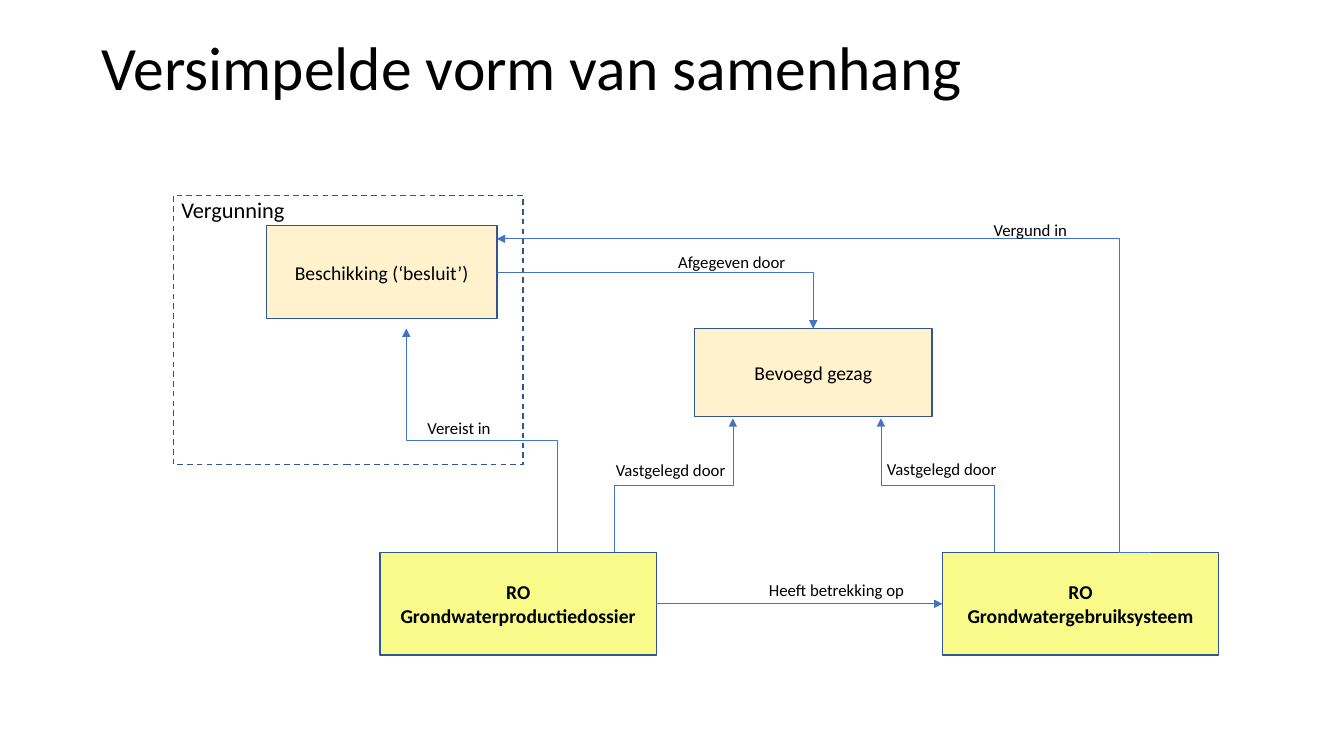
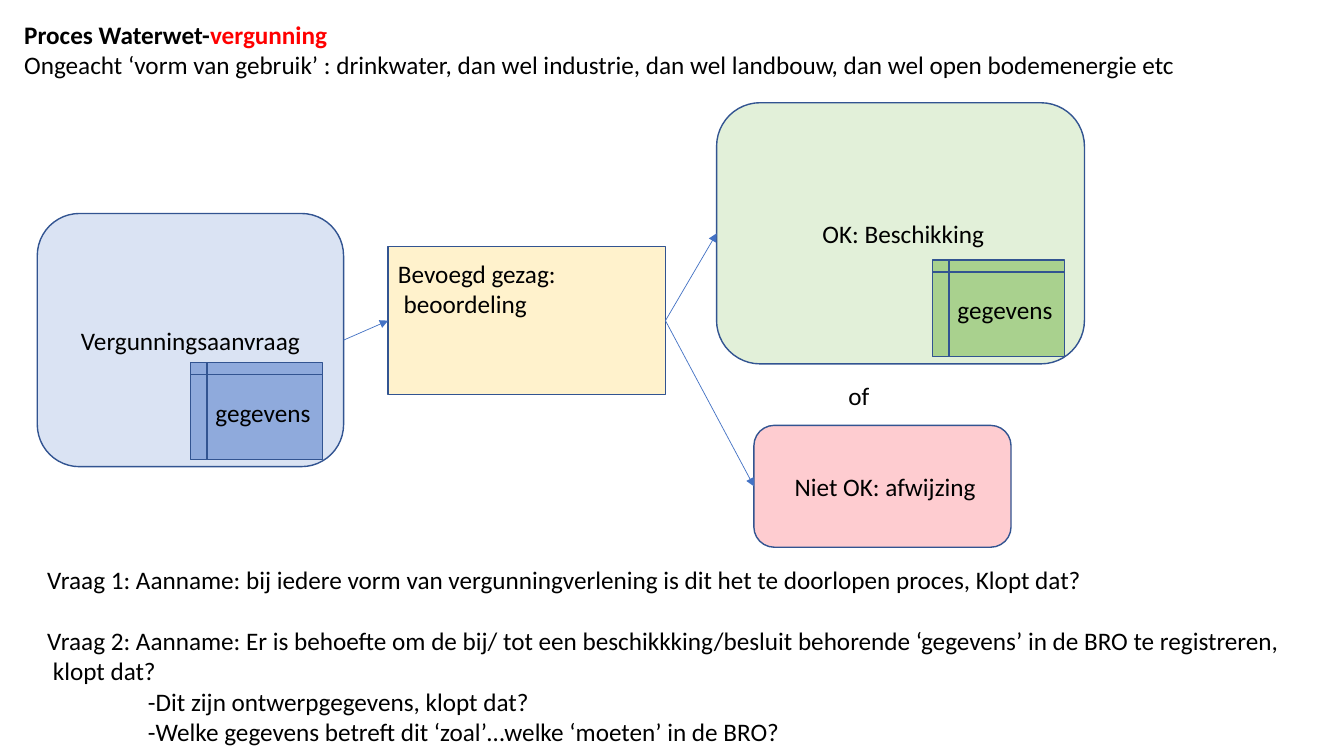
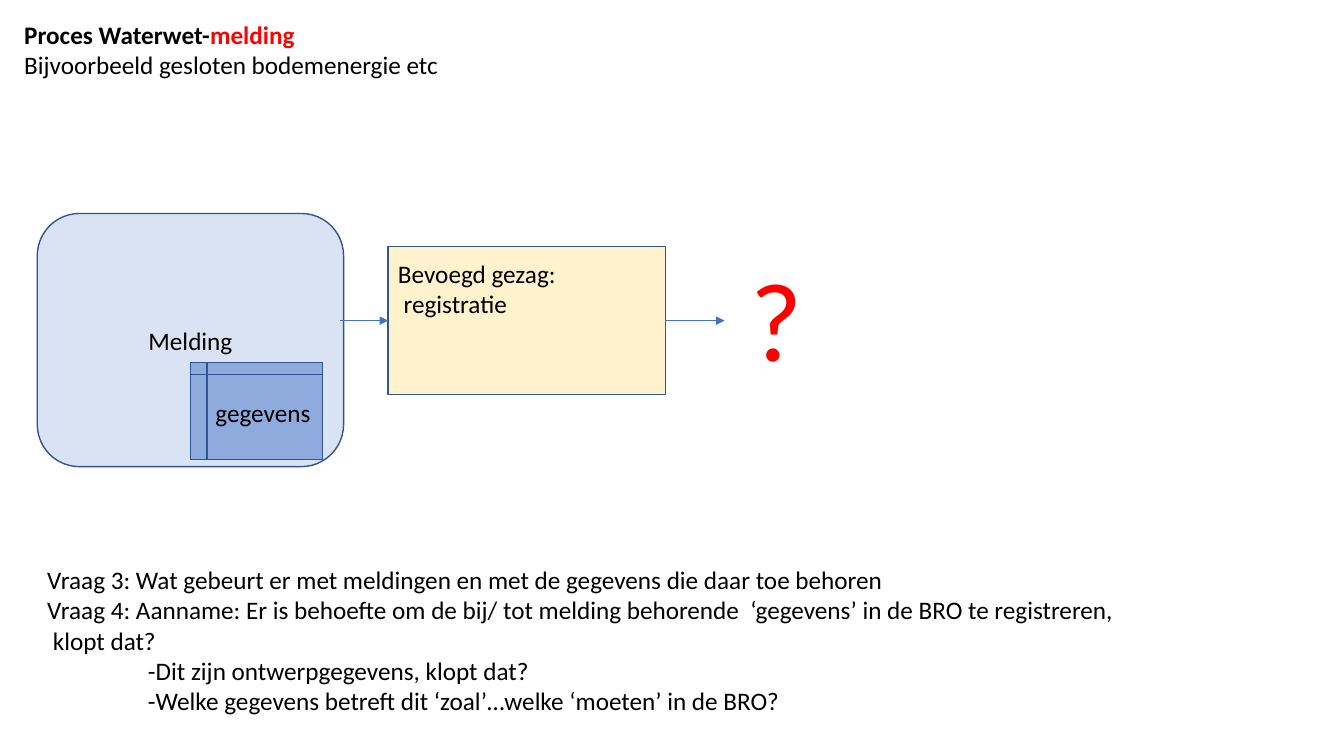
from lxml.etree import SubElement
from pptx import Presentation
from pptx.dml.color import RGBColor
from pptx.enum.dml import MSO_LINE
from pptx.enum.shapes import MSO_CONNECTOR, MSO_SHAPE
from pptx.enum.text import MSO_ANCHOR, PP_ALIGN
from pptx.oxml.ns import qn
from pptx.util import Cm, Pt

COLORS = {
    "text": "000000", "accent": "FF0000", "outline": "325491", "arrow": "4472C4",
    "object": "F8FB89", "authority": "FFF2CC", "request": "DAE3F3",
    "request_data": "8FAADC", "approved": "E2F0D9", "approved_data": "A9D18E",
    "rejected": "FECCD0",
}
FONT = "Calibri"
TOP, LEFT, BOTTOM, RIGHT = range(4)
BOX_TOP = 13.92  # upper edge of both registration objects


def rgb(name):
    return RGBColor.from_string(COLORS[name])


class Deck:
    """House style plus the slide being drawn; all positions in centimetres."""

    def __init__(self):
        self.presentation = Presentation()
        self.presentation.slide_width = Cm(33.87)
        self.presentation.slide_height = Cm(19.05)
        self.shapes = None

    def new_slide(self):
        layout = self.presentation.slide_layouts[6]
        self.shapes = self.presentation.slides.add_slide(layout).shapes

    def add_lines(self, frame, lines, size, bold=False, color="text", align=PP_ALIGN.LEFT):
        """Each line is a string or a list of (text, bold, color) runs."""
        for number, line in enumerate(lines):
            paragraph = frame.paragraphs[0] if number == 0 else frame.add_paragraph()
            paragraph.alignment = align
            runs = [(line, bold, color)] if isinstance(line, str) else line
            for words, is_bold, run_color in runs:
                run = paragraph.add_run()
                run.text = words
                run.font.name = FONT
                run.font.size = Pt(size)
                run.font.bold = is_bold
                run.font.color.rgb = rgb(run_color)

    def text(self, left, top, width, height, lines, size=18, **style):
        frame = self.shapes.add_textbox(Cm(left), Cm(top), Cm(width), Cm(height)).text_frame
        frame.word_wrap = False
        self.add_lines(frame, lines, size, **style)
        return frame

    def label(self, left, top, width, words):
        self.text(left, top, width, 0.76, [words], 12)

    def box(self, left, top, width, height, fill=None, lines=(), size=18, bold=False,
            kind=MSO_SHAPE.RECTANGLE):
        shape = self.shapes.add_shape(kind, Cm(left), Cm(top), Cm(width), Cm(height))
        shape.shadow.inherit = False
        if fill:
            shape.fill.solid()
            shape.fill.fore_color.rgb = rgb(fill)
        else:
            shape.fill.background()
        shape.line.color.rgb = rgb("outline")
        shape.line.width = Pt(1)
        shape.text_frame.vertical_anchor = MSO_ANCHOR.MIDDLE
        self.add_lines(shape.text_frame, lines, size, bold, align=PP_ALIGN.CENTER)
        return shape

    def rounded(self, left, top, width, height, fill, words):
        return self.box(left, top, width, height, fill, [words],
                        kind=MSO_SHAPE.ROUNDED_RECTANGLE)

    def data_store(self, left, top, fill):
        self.box(left, top, 3.33, 2.44, fill, kind=MSO_SHAPE.FLOWCHART_INTERNAL_STORAGE)
        self.text(left + 0.38, top + 0.75, 2.95, 1.02, ["gegevens"])

    def arrow(self, start, end, kind=MSO_CONNECTOR.STRAIGHT):
        """Each end is an (x, y) point or a (shape, side) pair."""
        joined = [not isinstance(tip[0], (int, float)) for tip in (start, end)]
        points = [(0, 0) if join else (Cm(tip[0]), Cm(tip[1]))
                  for tip, join in zip((start, end), joined)]
        connector = self.shapes.add_connector(kind, *points[0], *points[1])
        if joined[0]:
            connector.begin_connect(*start)
        if joined[1]:
            connector.end_connect(*end)
        connector.line.color.rgb = rgb("arrow")
        connector.line.width = Pt(0.5)
        properties = connector._element.spPr
        SubElement(properties.find(qn("a:ln")), qn("a:tailEnd"), type="triangle")
        SubElement(properties, qn("a:effectLst"))
        return properties

    def elbow(self, start, end, bend=None, single=False):
        """Bent arrow that leaves sideways."""
        geometry = self.arrow(start, end, MSO_CONNECTOR.ELBOW).find(qn("a:prstGeom"))
        if single:
            geometry.set("prst", "bentConnector2")
        if bend is not None:
            SubElement(geometry.find(qn("a:avLst")), qn("a:gd"),
                       name="adj1", fmla=f"val {round(bend * 100000)}")

    def rising_elbow(self, x1, y1, x2, y2):
        """Bent arrow that leaves upwards: a sideways one turned by 270 degrees."""
        middle_x, middle_y = (x1 + x2) / 2, (y1 + y2) / 2
        reach, shift = (y1 - y2) / 2, (x2 - x1) / 2
        properties = self.arrow((middle_x - reach, middle_y - shift),
                                (middle_x + reach, middle_y + shift), MSO_CONNECTOR.ELBOW)
        properties.find(qn("a:xfrm")).set("rot", str(270 * 60000))

    # Parts shared by the two process slides
    def process(self, topic, subtitle, request, task):
        self.new_slide()
        self.text(0.36, 0.36, 29.77, 1.8, [
            [("Proces Waterwet-", True, "text"), (topic, True, "accent")], subtitle])
        request_box = self.rounded(0.94, 5.38, 7.72, 6.38, "request", request)
        self.data_store(4.8, 9.14, "request_data")
        authority = self.box(9.78, 6.22, 6.99, 3.72, "authority")
        self.text(9.78, 6.38, 4.55, 1.8, ["Bevoegd gezag:", task])
        return request_box, authority

    def questions(self, lines):
        details = ["-Dit zijn ontwerpgegevens, klopt dat?",
                   "-Welke gegevens betreft dit ‘zoal’…welke ‘moeten’ in de BRO?"]
        frame = self.text(0.94, 14.1, 31.98, 4.83, lines + [" klopt dat?"] + details)
        for paragraph in frame.paragraphs[-len(details):]:
            paragraph._p.get_or_add_pPr().set("marL", str(Cm(2.54)))
        return frame


def relations_slide(deck):
    deck.new_slide()
    title = deck.text(2.31, -0.05, 29.21, 3.68, ["Versimpelde vorm van samenhang"], 44)
    title.vertical_anchor = MSO_ANCHOR.MIDDLE
    title.paragraphs[0].line_spacing = 0.9

    # Objects
    usage_system, dossier = [
        deck.box(left, BOX_TOP, 6.96, 2.59, "object", ["RO", name], 14, True)
        for left, name in ((23.75, "Grondwatergebruiksysteem"),
                           (9.58, "Grondwaterproductiedossier"))]
    authority = deck.box(17.5, 8.28, 5.99, 2.21, "authority", ["Bevoegd gezag"], 14)
    decision = deck.box(6.71, 5.69, 5.82, 2.34, "authority", ["Beschikking (‘besluit’)"], 14)
    permit = deck.box(4.37, 4.93, 8.81, 6.78)
    permit.line.dash_style = MSO_LINE.DASH
    deck.text(4.32, 4.83, 3.15, 0.94, ["Vergunning"], 16)

    # Relations
    deck.arrow((dossier, RIGHT), (usage_system, LEFT))
    deck.elbow((decision, RIGHT), (authority, TOP), single=True)
    deck.elbow((29.01, BOX_TOP), (12.52, 6.02), bend=0.048)
    for x1, x2, y2 in ((15.49, 18.47, 10.54), (25.07, 22.2, 10.54), (14.05, 10.24, 8.28)):
        deck.rising_elbow(x1, BOX_TOP, x2, y2)
    for left, top, width, words in (
            (19.13, 14.48, 3.96, "Heeft betrekking op"),
            (22.1, 11.43, 3.3, "Vastgelegd door"),
            (15.27, 11.46, 3.3, "Vastgelegd door"),
            (24.79, 5.41, 2.36, "Vergund in"),
            (16.84, 6.22, 3.25, "Afgegeven door"),
            (10.52, 10.39, 2.13, "Vereist in")):
        deck.label(left, top, width, words)


def permit_slide(deck):
    request, authority = deck.process(
        "vergunning",
        "Ongeacht ‘vorm van gebruik’ : drinkwater, dan wel industrie, "
        "dan wel landbouw, dan wel open bodemenergie etc",
        "Vergunningsaanvraag", " beoordeling")

    # Outcomes
    approved = deck.rounded(18.06, 2.59, 9.27, 6.58, "approved", " OK: Beschikking")
    deck.data_store(23.5, 6.55, "approved_data")
    deck.text(21.13, 9.45, 1.04, 1.02, ["of"])
    rejected = deck.rounded(19, 10.72, 6.48, 3.07, "rejected", " Niet OK: afwijzing")
    for source, target in ((request, authority), (authority, approved), (authority, rejected)):
        deck.arrow((source, RIGHT), (target, LEFT))

    questions = deck.questions([
        "Vraag 1: Aanname: bij iedere vorm van vergunningverlening is dit het te "
        "doorlopen proces, Klopt dat?",
        "Vraag 2: Aanname: Er is behoefte om de bij/ tot een beschikkking/besluit "
        "behorende ‘gegevens’ in de BRO te registreren,"])
    questions.paragraphs[0].space_after = Pt(22)


def notification_slide(deck):
    _, authority = deck.process("melding", "Bijvoorbeeld gesloten bodemenergie etc",
                                "Melding", " registratie")

    # Open outcome
    deck.arrow((8.56, 8.08), (authority, LEFT))
    deck.arrow((authority, RIGHT), (18.26, 8.08))
    deck.text(18.67, 6.17, 1.83, 3.68, ["?"], 80, color="accent")

    deck.questions([
        "Vraag 3: Wat gebeurt er met meldingen en met de gegevens die daar toe behoren",
        "Vraag 4: Aanname: Er is behoefte om de bij/ tot melding behorende  ‘gegevens’ "
        "in de BRO te registreren,"])


def main():
    deck = Deck()
    relations_slide(deck)
    permit_slide(deck)
    notification_slide(deck)
    deck.presentation.save("out.pptx")


if __name__ == "__main__":
    main()
